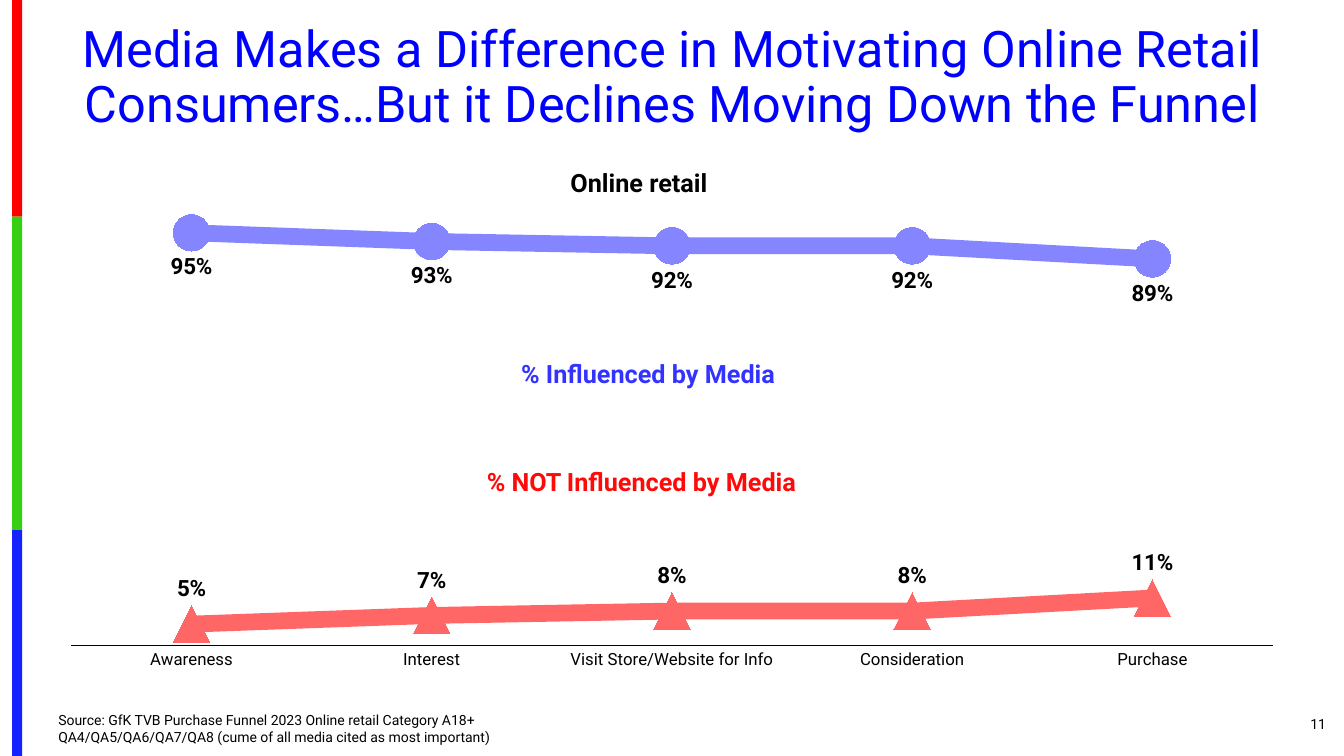
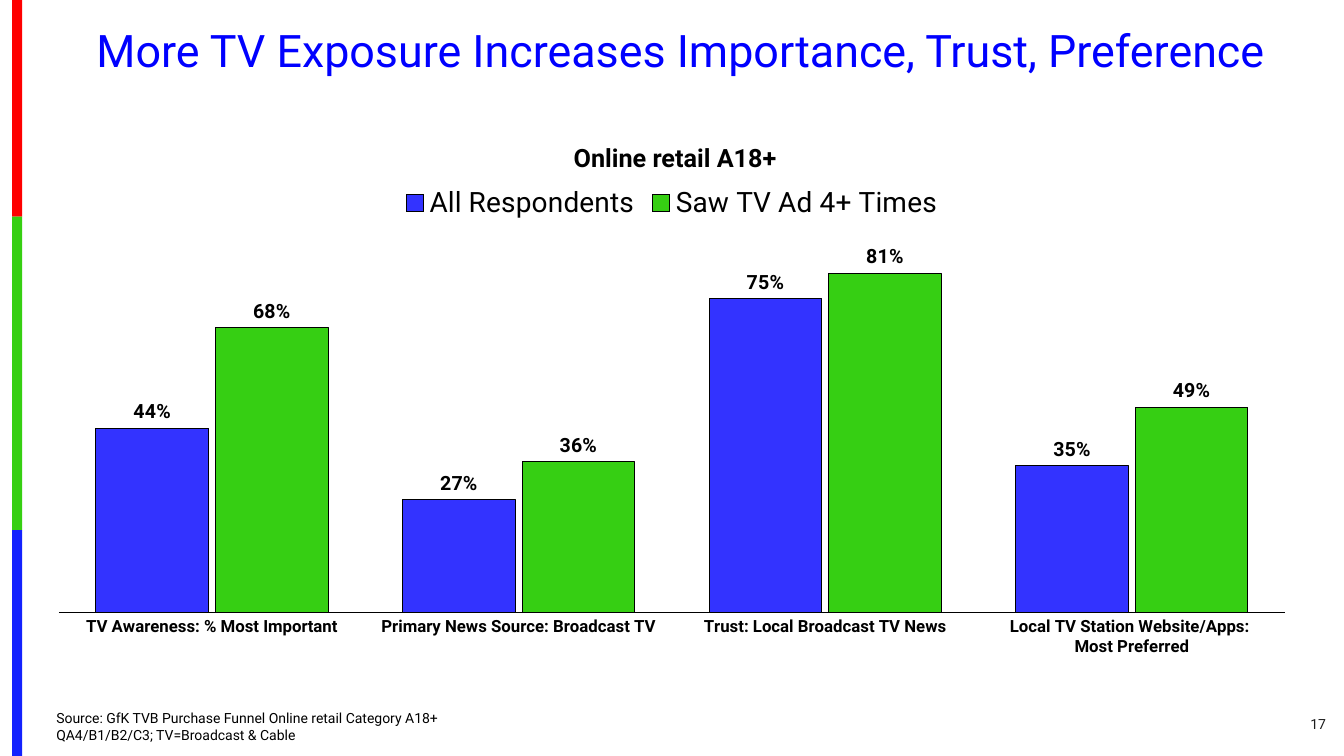
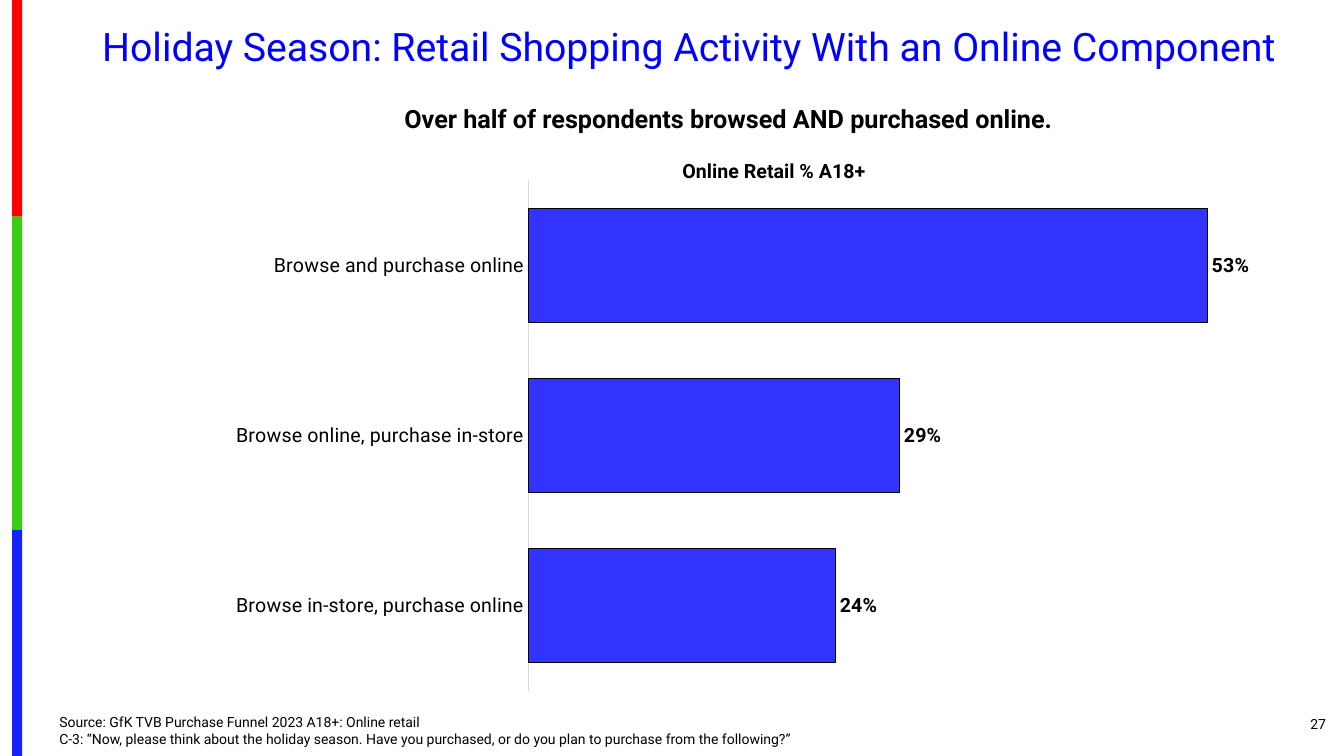
from dataclasses import dataclass
from typing import Optional

import pptx
import pptx.chart.chart
import pptx.chart.data
import pptx.dml.color
import pptx.enum.chart
import pptx.enum.shapes
import pptx.enum.text
import pptx.oxml
import pptx.oxml.ns
import pptx.presentation
import pptx.slide
import pptx.util

Inches = pptx.util.Inches
Pt = pptx.util.Pt
RGBColor = pptx.dml.color.RGBColor
ChartType = pptx.enum.chart.XL_CHART_TYPE
LabelPosition = pptx.enum.chart.XL_LABEL_POSITION
Marker = pptx.enum.chart.XL_MARKER_STYLE
Align = pptx.enum.text.PP_ALIGN
Anchor = pptx.enum.text.MSO_ANCHOR

# Shared style
FONT = "Roboto"
BLACK = RGBColor(0x00, 0x00, 0x00)
CHARCOAL = RGBColor(0x1C, 0x1C, 0x1C)
AXIS_GRAY = RGBColor(0xD9, 0xD9, 0xD9)
TITLE_BLUE = RGBColor(0x00, 0x00, 0xFF)
BLUE = RGBColor(0x33, 0x33, 0xFF)
GREEN = RGBColor(0x36, 0xCF, 0x13)
RED = RGBColor(0xFF, 0x09, 0x09)
SOFT_BLUE = RGBColor(0x85, 0x85, 0xFF)
SOFT_RED = RGBColor(0xFF, 0x66, 0x66)
STRIPE_RED = RGBColor(0xFE, 0x00, 0x00)
STRIPE_GREEN = RGBColor(0x36, 0xCF, 0x12)
STRIPE_BLUE = RGBColor(0x13, 0x22, 0xFE)

STRIPE_LEFT, STRIPE_WIDTH = 0.12, 0.1
STRIPES = [(0, 2.15, STRIPE_RED), (2.15, 5.26, STRIPE_GREEN), (5.26, 7.5, STRIPE_BLUE)]


@dataclass(frozen=True)
class Area:
    left: float
    top: float
    width: float
    height: float

    def lengths(self) -> tuple[pptx.util.Length, ...]:
        return tuple(Inches(n) for n in (self.left, self.top, self.width, self.height))


@dataclass(frozen=True)
class Label:
    text: str
    area: Area
    size: float = 18
    color: RGBColor = BLACK
    bold: bool = True
    align: Align = Align.LEFT
    anchor: Anchor = Anchor.TOP
    wrap: bool = True
    line_spacing: float = 1.0


@dataclass(frozen=True)
class Series:
    name: str
    values: tuple[float, ...]
    color: RGBColor
    label_position: LabelPosition = LabelPosition.OUTSIDE_END
    marker: Optional[Marker] = None


@dataclass(frozen=True)
class ChartSpec:
    kind: ChartType
    area: Area
    categories: tuple[str, ...]
    series: tuple[Series, ...]
    maximum: float
    label_size: float
    axis_size: float
    axis_bold: bool = False
    axis_color: RGBColor = BLACK
    gap: int = 0
    overlap: int = 0
    legend: bool = False
    plot_area: Optional[Area] = None


@dataclass(frozen=True)
class Page:
    title: str
    title_area: Area
    title_size: float
    number: str
    source: str
    source_area: Area
    chart: ChartSpec
    labels: tuple[Label, ...]
    number_color: RGBColor = BLACK


def set_font(font, size: float, color: RGBColor = BLACK, bold: bool = False) -> None:
    font.name = FONT
    font.size = Pt(size)
    font.bold = bold
    font.color.rgb = color


def add_label(slide: pptx.slide.Slide, label: Label) -> None:
    frame = slide.shapes.add_textbox(*label.area.lengths()).text_frame
    frame.word_wrap = label.wrap
    frame.vertical_anchor = label.anchor
    frame.text = label.text
    for para in frame.paragraphs:
        para.alignment = label.align
        para.line_spacing = label.line_spacing
        for span in para.runs:
            set_font(span.font, label.size, label.color, label.bold)


def add_stripes(slide: pptx.slide.Slide) -> None:
    for top, bottom, color in STRIPES:
        area = Area(STRIPE_LEFT, top, STRIPE_WIDTH, bottom - top)
        stripe = slide.shapes.add_shape(
            pptx.enum.shapes.MSO_SHAPE.RECTANGLE, *area.lengths())
        stripe.shadow.inherit = False
        stripe.fill.solid()
        stripe.fill.fore_color.rgb = color
        stripe.line.fill.background()


def place_plot(chart: pptx.chart.chart.Chart, area: Area) -> None:
    """Fix the inner plot area, in fractions of the chart."""
    plot_area = chart.element.xpath("c:chart/c:plotArea")[0]
    for old in plot_area.xpath("c:layout"):
        plot_area.remove(old)
    layout = pptx.oxml.parse_xml(
        f'<c:layout {pptx.oxml.ns.nsdecls("c")}><c:manualLayout>'
        '<c:layoutTarget val="inner"/><c:xMode val="edge"/><c:yMode val="edge"/>'
        f'<c:x val="{area.left}"/><c:y val="{area.top}"/>'
        f'<c:w val="{area.width}"/><c:h val="{area.height}"/>'
        '</c:manualLayout></c:layout>')
    plot_area.insert(0, layout)


def style_series(series, style: Series, label_size: float) -> None:
    line = series.format.line
    if style.marker is None:
        series.format.fill.solid()
        series.format.fill.fore_color.rgb = style.color
        line.color.rgb = BLACK
        line.width = Pt(0.75)
    else:
        series.smooth = False
        line.color.rgb = style.color
        line.width = Pt(12)
        series.marker.style = style.marker
        series.marker.size = 26
        series.marker.format.fill.solid()
        series.marker.format.fill.fore_color.rgb = style.color
        series.marker.format.line.fill.background()
    labels = series.data_labels
    labels.show_value = True
    labels.number_format = "0%"
    labels.number_format_is_linked = False
    labels.position = style.label_position
    set_font(labels.font, label_size, bold=True)


def add_chart(slide: pptx.slide.Slide, spec: ChartSpec) -> None:
    data = pptx.chart.data.CategoryChartData(number_format="0%")
    data.categories = spec.categories
    for item in spec.series:
        data.add_series(item.name, item.values)
    chart = slide.shapes.add_chart(spec.kind, *spec.area.lengths(), data).chart
    chart.has_title = False
    set_font(chart.font, 10)

    # Legend
    chart.has_legend = spec.legend
    if spec.legend:
        chart.legend.position = pptx.enum.chart.XL_LEGEND_POSITION.TOP
        chart.legend.include_in_layout = False
        set_font(chart.legend.font, 20)

    # Axes
    chart.value_axis.visible = False
    chart.value_axis.has_major_gridlines = False
    chart.value_axis.minimum_scale = 0
    chart.value_axis.maximum_scale = spec.maximum
    axis = chart.category_axis
    axis.major_tick_mark = pptx.enum.chart.XL_TICK_MARK.NONE
    axis.format.line.color.rgb = spec.axis_color
    axis.format.line.width = Pt(0.75)
    set_font(axis.tick_labels.font, spec.axis_size, bold=spec.axis_bold)

    # Plot and series
    plot = chart.plots[0]
    plot.vary_by_categories = False
    if spec.kind != ChartType.LINE_MARKERS:
        plot.gap_width = spec.gap
        plot.overlap = spec.overlap
    for series, style in zip(plot.series, spec.series):
        style_series(series, style, spec.label_size)
    if spec.plot_area:
        place_plot(chart, spec.plot_area)


def add_page(deck: pptx.presentation.Presentation, page: Page) -> None:
    slide = deck.slides.add_slide(deck.slide_layouts[6])
    add_stripes(slide)
    add_label(slide, Label(page.title, page.title_area, page.title_size, TITLE_BLUE,
                           bold=False, align=Align.CENTER, line_spacing=0.9))
    add_chart(slide, page.chart)
    add_label(slide, Label(page.number, Area(12.17, 6.98, 1.08, 0.4), 10,
                           page.number_color, bold=False, align=Align.RIGHT,
                           anchor=Anchor.MIDDLE))
    add_label(slide, Label(page.source, page.source_area, 10, bold=False,
                           anchor=Anchor.BOTTOM))
    for label in page.labels:
        add_label(slide, label)


PAGES = [
    # Media influence along the funnel
    Page(
        "Media Makes a Difference in Motivating Online Retail Consumers…"
        "But it Declines Moving Down the Funnel",
        Area(0.46, 0.19, 12.42, 1.19), 36, "11",
        "Source: GfK TVB Purchase Funnel 2023 Online retail Category A18+\n"
        "QA4/QA5/QA6/QA7/QA8 (cume of all media cited as most important)",
        Area(0.48, 7, 9.45, 0.44),
        ChartSpec(
            ChartType.LINE_MARKERS, Area(0.46, 2, 12.41, 4.74),
            ("Awareness", "Interest", "Visit Store/Website for Info",
             "Consideration", "Purchase"),
            (Series("Series 1", (0.95, 0.93, 0.92, 0.92, 0.89), SOFT_BLUE,
                    LabelPosition.BELOW, Marker.CIRCLE),
             Series("Series 2", (0.05, 0.07, 0.08, 0.08, 0.11), SOFT_RED,
                    LabelPosition.ABOVE, Marker.TRIANGLE)),
            maximum=1, label_size=16, axis_size=12),
        (Label("% Influenced by Media", Area(5.07, 3.51, 3.17, 0.4), color=BLUE, wrap=False),
         Label("% NOT Influenced by Media", Area(4.73, 4.58, 3.78, 0.4), color=RED,
               wrap=False),
         Label("Online retail", Area(5.56, 1.61, 1.76, 0.4), wrap=False)),
    ),
    # Effect of TV exposure
    Page(
        "More TV Exposure Increases Importance, Trust, Preference",
        Area(0.42, 0.24, 12.67, 0.71), 32, "17",
        "Source: GfK TVB Purchase Funnel Online retail Category A18+\n"
        "QA4/B1/B2/C3; TV=Broadcast & Cable",
        Area(0.46, 6.98, 9.45, 0.44),
        ChartSpec(
            ChartType.COLUMN_CLUSTERED, Area(0.33, 1.72, 12.67, 4.89),
            ("TV Awareness: % Most Important", "Primary News Source: Broadcast TV",
             "Trust: Local Broadcast TV News",
             "Local TV Station Website/Apps: \nMost Preferred"),
            (Series("All Respondents", (0.44, 0.27, 0.75, 0.35), BLUE),
             Series("Saw TV Ad 4+ Times", (0.68, 0.36, 0.81, 0.49), GREEN)),
            maximum=0.9, label_size=14, axis_size=12, axis_bold=True,
            gap=66, overlap=-6, legend=True),
        (Label("Online retail A18+", Area(3.87, 1.36, 5.65, 0.4), align=Align.CENTER),),
        number_color=CHARCOAL,
    ),
    # Holiday shopping
    Page(
        "Holiday Season: Retail Shopping Activity With an Online Component",
        Area(0.62, 0.23, 12.42, 0.53), 28, "27",
        "Source: GfK TVB Purchase Funnel 2023 A18+: Online retail\n"
        "C-3: “Now, please think about the holiday season. Have you purchased, "
        "or do you plan to purchase from the following?”",
        Area(0.49, 7.02, 9.45, 0.44),
        ChartSpec(
            ChartType.BAR_CLUSTERED, Area(0.46, 1.64, 12.41, 5.37),
            ("Browse in-store, purchase online", "Browse online, purchase in-store",
             "Browse and purchase online"),
            (Series("Series 1", (0.24, 0.29, 0.53), BLUE),),
            maximum=0.6, label_size=14, axis_size=14, axis_color=AXIS_GRAY,
            gap=49, plot_area=Area(0.385, 0.028, 0.615, 0.943)),
        (Label("Online Retail % A18+", Area(6.67, 1.53, 2.37, 0.34), 14, wrap=False),
         Label("Over half of respondents browsed AND purchased online.",
               Area(2.25, 0.98, 9.95, 0.4), align=Align.CENTER)),
    ),
]


def main() -> None:
    deck = pptx.Presentation()
    deck.slide_width, deck.slide_height = Inches(13.33), Inches(7.5)
    for page in PAGES:
        add_page(deck, page)
    deck.save("out.pptx")


if __name__ == "__main__":
    main()
